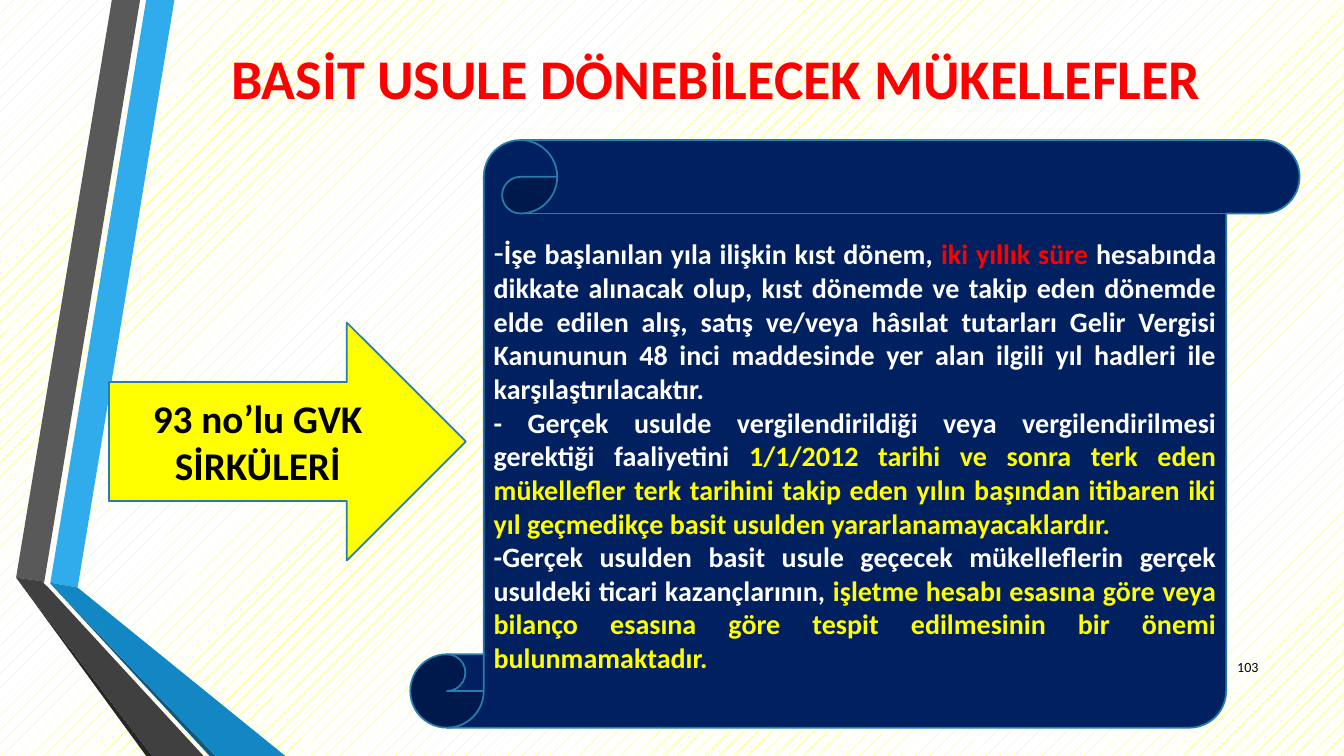
from pptx import Presentation, util as u
from pptx.dml.color import RGBColor
from pptx.enum import dml, shapes, text

COLORS = {
    "white": "FFFFFF", "black": "000000", "red": "FF0000", "yellow": "FFFF00",
    "navy": "002060", "outline": "247FAF",
    "sky": "30ACEC", "blue": "1287C3", "deep": "0C5A82",
    "gray": "595959", "charcoal": "404040", "soot": "262626",
}
WIDTH, HEIGHT = u.Inches(13.33), u.Inches(7.5)
RIBBON_UNITS = 10000

BOXES = {
    "ribbons": (1.2, 0, 20.03, 100),
    "title": (12.15, 3.87, 82.22, 12.53),
    "number": (89.87, 85.6, 4.5, 5.33),
    "arrow": (8.1, 42.67, 26.56, 31.47),
    "scroll": (30.53, 18.53, 66.17, 77.73),
}

RIBBONS = [
    ("sky", [(1273, 7707), (2285, 7773), (5880, 0), (4831, 0)]),
    ("gray", [(4607, 0), (3558, 0), (0, 7640), (1049, 7693)]),
    ("soot", [(0, 7640), (4831, 10000), (5056, 10000)]),
    ("deep", [(1273, 7720), (7191, 10000), (7416, 10000)]),
    ("blue", [(1273, 7720), (7416, 10000), (10000, 10000), (2285, 7773), (1273, 7707)]),
    ("charcoal", [(6966, 10000), (1199, 7773), (1011, 7707), (1049, 7693),
                  (0, 7640), (5056, 10000)]),
]

SCROLL_TEXT = [
    [("-", "white", {"size": u.Pt(24), "bold": False}),
     ("İşe başlanılan yıla ilişkin kıst dönem, ", "white", {}),
     ("iki yıllık süre ", "red", {}),
     ("hesabında dikkate alınacak olup, kıst dönemde ve takip eden dönemde elde edilen "
      "alış, satış ve/veya hâsılat tutarları Gelir Vergisi Kanununun 48 inci maddesinde "
      "yer alan ilgili yıl hadleri ile karşılaştırılacaktır.", "white", {})],
    [("- Gerçek usulde vergilendirildiği veya vergilendirilmesi gerektiği faaliyetini ",
      "white", {}),
     ("1/1/2012 tarihi ve sonra terk eden mükellefler terk tarihini takip eden yılın "
      "başından itibaren iki yıl geçmedikçe basit usulden yararlanamayacaklardır.",
      "yellow", {})],
    [("-Gerçek usulden basit usule geçecek mükelleflerin gerçek usuldeki ticari "
      "kazançlarının, ", "white", {}),
     ("işletme hesabı esasına göre veya bilanço esasına göre tespit edilmesinin bir "
      "önemi bulunmamaktadır.", "yellow", {})],
]


def color(name):
    return RGBColor.from_string(COLORS[name])


def place(box):
    return [round(share * side / 100) for share, side in zip(box, (WIDTH, HEIGHT) * 2)]


def write(shape, paragraphs, align, size, bold=True):
    frame = shape.text_frame
    frame.word_wrap = True
    frame.vertical_anchor = text.MSO_ANCHOR.MIDDLE
    for index, runs in enumerate(paragraphs):
        paragraph = frame.add_paragraph() if index else frame.paragraphs[0]
        paragraph.alignment = align
        for words, tint, changes in runs:
            run = paragraph.add_run()
            run.text = words
            formats = {"name": "Calibri", "size": u.Pt(size), "bold": bold, **changes}
            for attribute, value in formats.items():
                setattr(run.font, attribute, value)
            run.font.color.rgb = color(tint)


def paint(shape, fill, outline=None):
    shape.shadow.inherit = False
    shape.fill.solid()
    shape.fill.fore_color.rgb = color(fill)
    if outline:
        shape.line.color.rgb = color(outline)
        shape.line.width = u.Pt(1.25)
    else:
        shape.line.fill.background()


def draw_background(slide):
    fill = slide.background.fill
    fill.patterned()
    fill.pattern = dml.MSO_PATTERN.PERCENT_5
    fill.fore_color.rgb = color("yellow")
    fill.back_color.rgb = color("white")


def draw_ribbons(slide, box):
    left, top, width, height = place(box)
    scale = (width / RIBBON_UNITS, height / RIBBON_UNITS)
    for fill, points in RIBBONS:
        builder = slide.shapes.build_freeform(*points[0], scale=scale)
        builder.add_line_segments(points[1:], close=True)
        paint(builder.convert_to_shape(left, top), fill)


def draw_label(slide, box, words, tint, align, size, bold):
    label = slide.shapes.add_textbox(*place(box))
    write(label, [[(words, tint, {})]], align, size, bold)


def draw_panel(slide, box, kind, fill, paragraphs, align, size):
    panel = slide.shapes.add_shape(kind, *place(box))
    paint(panel, fill, "outline")
    write(panel, paragraphs, align, size)


def main():
    presentation = Presentation()
    presentation.slide_width, presentation.slide_height = WIDTH, HEIGHT
    slide = presentation.slides.add_slide(presentation.slide_layouts[6])
    draw_background(slide)
    draw_ribbons(slide, BOXES["ribbons"])
    draw_label(slide, BOXES["title"], "BASİT USULE DÖNEBİLECEK MÜKELLEFLER",
               "red", text.PP_ALIGN.CENTER, 40, True)
    draw_label(slide, BOXES["number"], "103", "black", text.PP_ALIGN.RIGHT, 10, False)
    draw_panel(slide, BOXES["arrow"], shapes.MSO_SHAPE.RIGHT_ARROW, "yellow",
               [[("93 no’lu GVK SİRKÜLERİ", "black", {})]], text.PP_ALIGN.CENTER, 28)
    draw_panel(slide, BOXES["scroll"], shapes.MSO_SHAPE.VERTICAL_SCROLL, "navy",
               SCROLL_TEXT, text.PP_ALIGN.JUSTIFY, 20)
    presentation.save("out.pptx")


if __name__ == "__main__":
    main()
